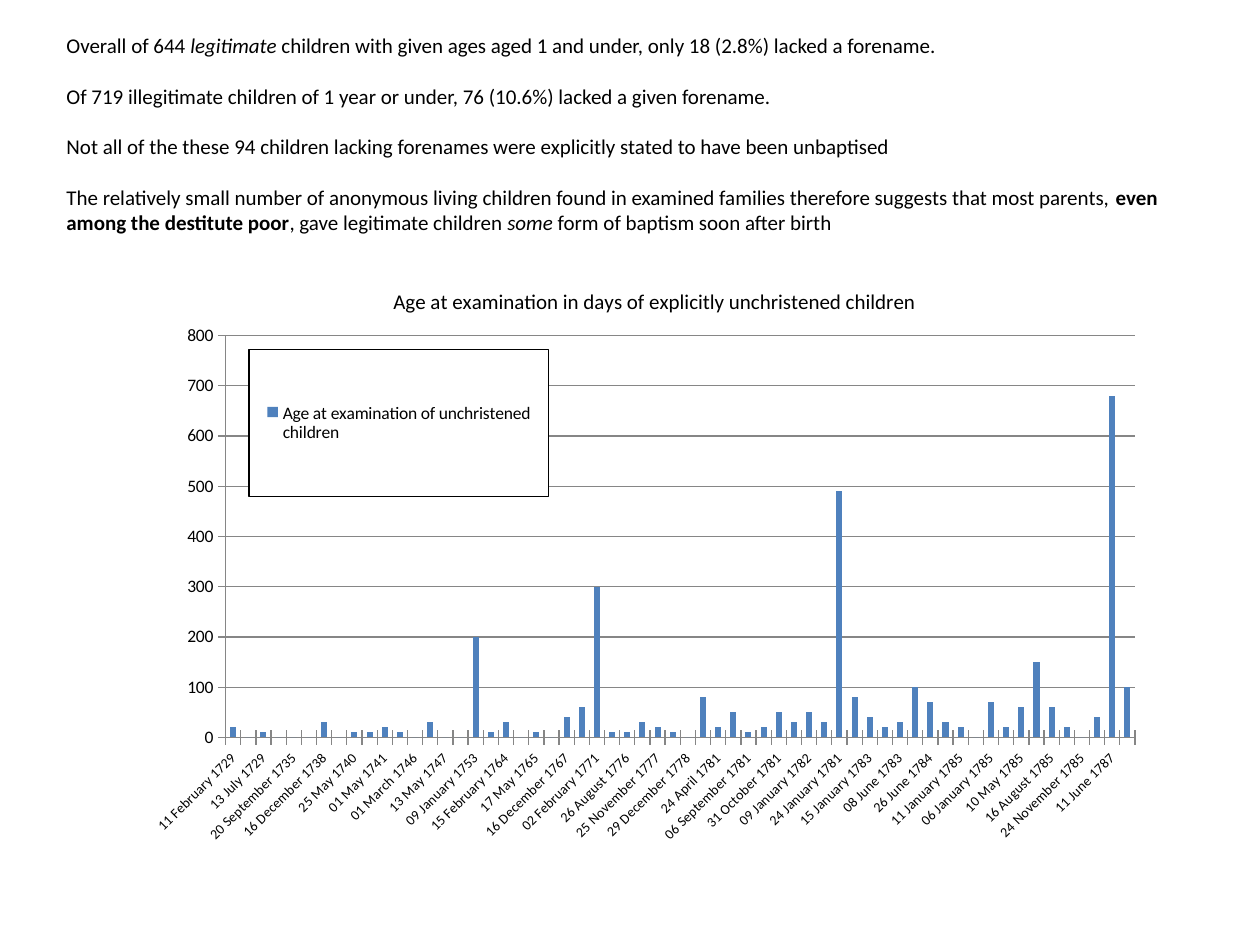
from lxml import etree
from pptx import Presentation
from pptx.chart.data import CategoryChartData
from pptx.dml.color import RGBColor
from pptx.enum.chart import XL_CHART_TYPE, XL_LEGEND_POSITION, XL_TICK_MARK
from pptx.enum.text import MSO_AUTO_SIZE
from pptx.oxml import parse_xml
from pptx.oxml.ns import nsdecls, qn
from pptx.util import Cm, Pt

COLUMNS = XL_CHART_TYPE.COLUMN_CLUSTERED
LEGEND_RIGHT = XL_LEGEND_POSITION.RIGHT
TICK_CROSS = XL_TICK_MARK.CROSS
FIT_SHAPE = MSO_AUTO_SIZE.SHAPE_TO_FIT_TEXT

FONT = "Calibri"
COLORS = {"text": "000000", "bar": "4F81BD", "grid": "868686", "paper": "FFFFFF"}

# Content: each paragraph is a list of (text, style)
FINDINGS = [
    [("Overall of 644 ", ""), ("legitimate", "italic"),
     (" children with given ages aged 1 and under, only 18 (2.8%) lacked a forename.", "")],
    [("Of 719 illegitimate children of 1 year or under, 76 (10.6%) lacked a given forename.", "")],
    [("Not all of the these 94 children lacking forenames were explicitly stated "
      "to have been unbaptised", "")],
    [("The relatively small number of anonymous living children found in examined families "
      "therefore suggests that most parents, ", ""),
     ("even among the destitute poor", "bold"), (", gave legitimate children ", ""),
     ("some", "italic"), (" form of baptism soon after birth", "")],
]
CHART_TITLE = "Age at examination in days of explicitly unchristened children"
SERIES_NAME = "Age at examination of unchristened children"
AGES = [
    ("11 February 1729", 20), ("02 June 1729", 0), ("13 July 1729", 10),
    ("26 August 1730", 0), ("20 September 1735", 0), ("04 April 1736", 0),
    ("16 December 1738", 30), ("17 August 1739", 0), ("25 May 1740", 10),
    ("25 January 1741", 10), ("01 May 1741", 20), ("04 December 1742", 10),
    ("01 March 1746", 0), ("09 January 1747", 30), ("13 May 1747", 0),
    ("14 December 1751", 0), ("09 January 1753", 200), ("01 January 1757", 10),
    ("15 February 1764", 30), ("06 April 1764", 0), ("17 May 1765", 10),
    ("09 October 1766", 0), ("16 December 1767", 40), ("22 April 1771", 60),
    ("02 February 1771", 300), ("20 August 1776", 10), ("26 August 1776", 10),
    ("20 February 1777", 30), ("25 November 1777", 20), ("17 February 1778", 10),
    ("29 December 1778", 0), ("02 May 1780", 80), ("24 April 1781", 20),
    ("23 June 1781", 50), ("06 September 1781", 10), ("04 October 1781", 20),
    ("31 October 1781", 50), ("11 January 1782", 30), ("09 January 1782", 50),
    ("06 April 1782", 30), ("24 January 1781", 490), ("19 November 1782", 80),
    ("15 January 1783", 40), ("22 April 1783", 20), ("08 June 1783", 30),
    ("01 October 1783", 100), ("26 June 1784", 70), ("17 September 1784", 30),
    ("11 January 1785", 20), ("11 March 1785", 0), ("06 January 1785", 70),
    ("06 May 1785", 20), ("10 May 1785", 60), ("29 March 1785", 150),
    ("16 August 1785", 60), ("05 November 1785", 20), ("24 November 1785", 0),
    ("20 October 1788", 40), ("11 June 1787", 680), ("16 December 1790", 100),
]


def rgb(name):
    return RGBColor.from_string(COLORS[name])


def style_font(font, size):
    font.name, font.size = FONT, Pt(size)
    font.color.rgb = rgb("text")


def manual_layout(x, y, w, h, inner=False):
    """Layout element placing a chart part by fractions of the chart."""
    layout = etree.Element(qn("c:layout"))
    manual = etree.SubElement(layout, qn("c:manualLayout"))
    settings = [("layoutTarget", "inner")] if inner else []
    settings += [("xMode", "edge"), ("yMode", "edge"), ("x", x), ("y", y), ("w", w), ("h", h)]
    for tag, value in settings:
        etree.SubElement(manual, qn("c:" + tag)).set("val", str(value))
    return layout


presentation = Presentation()
presentation.slide_width, presentation.slide_height = Cm(25.4), Cm(19.05)
slide = presentation.slides.add_slide(presentation.slide_layouts[6])

# Chart of ages
data = CategoryChartData()
data.categories = [date for date, _ in AGES]
data.add_series(SERIES_NAME, [days for _, days in AGES])
chart = slide.shapes.add_chart(COLUMNS, Cm(2.9), Cm(5.33), Cm(20.6), Cm(12.47), data).chart
style_font(chart.font, 10)
chart.has_title = True
title = chart.chart_title.text_frame.paragraphs[0].add_run()
title.text = CHART_TITLE
style_font(title.font, 12)
title.font.bold = False

plot = chart.plots[0]
plot.gap_width = 150
plot.vary_by_categories = False
bars = plot.series[0].format.fill
bars.solid()
bars.fore_color.rgb = rgb("bar")

plot_area = chart._chartSpace.chart.plotArea
for old_layout in plot_area.findall(qn("c:layout")):
    plot_area.remove(old_layout)
plot_area.insert(0, manual_layout(0.08, 0.115, 0.89, 0.65, inner=True))

# Axes
dates, days = chart.category_axis, chart.value_axis
for axis, size in ((dates, 8), (days, 10)):
    axis.major_tick_mark = TICK_CROSS
    style_font(axis.tick_labels.font, size)
    axis.format.line.color.rgb = rgb("grid")
days.minimum_scale, days.maximum_scale, days.major_unit = 0, 800, 100
days.has_major_gridlines = True
days.major_gridlines.format.line.color.rgb = rgb("grid")
dates_xml = dates._element
dates_xml.find(qn("c:txPr")).find(qn("a:bodyPr")).set("rot", "-2700000")
label_skip = etree.Element(qn("c:tickLblSkip"), val="2")
dates_xml.find(qn("c:noMultiLvlLbl")).addprevious(label_skip)

# Framed legend over the plot
chart.has_legend = True
legend = chart.legend
legend.position = LEGEND_RIGHT
legend.include_in_layout = False
style_font(legend.font, 10)
overlay = legend._element.find(qn("c:overlay"))
for old_layout in legend._element.findall(qn("c:layout")):
    legend._element.remove(old_layout)
overlay.addprevious(manual_layout(0.103, 0.138, 0.293, 0.237))
overlay.addnext(parse_xml(
    f'<c:spPr {nsdecls("c", "a")}>'
    f'<a:solidFill><a:srgbClr val="{COLORS["paper"]}"/></a:solidFill>'
    f'<a:ln w="9525"><a:solidFill><a:srgbClr val="{COLORS["text"]}"/></a:solidFill></a:ln>'
    '</c:spPr>'))

# Findings above the chart
findings = slide.shapes.add_textbox(Cm(1.09), Cm(0.53), Cm(23.19), Cm(4.37)).text_frame
findings.word_wrap = True
findings.auto_size = FIT_SHAPE
for index, finding in enumerate(FINDINGS):
    paragraph = findings.paragraphs[0] if index == 0 else findings.add_paragraph()
    if index < len(FINDINGS) - 1:
        paragraph.space_after = Pt(14.5)
    for text, style in finding:
        run = paragraph.add_run()
        run.text = text
        style_font(run.font, 12)
        run.font.bold = style == "bold"
        run.font.italic = style == "italic"

presentation.save("out.pptx")
